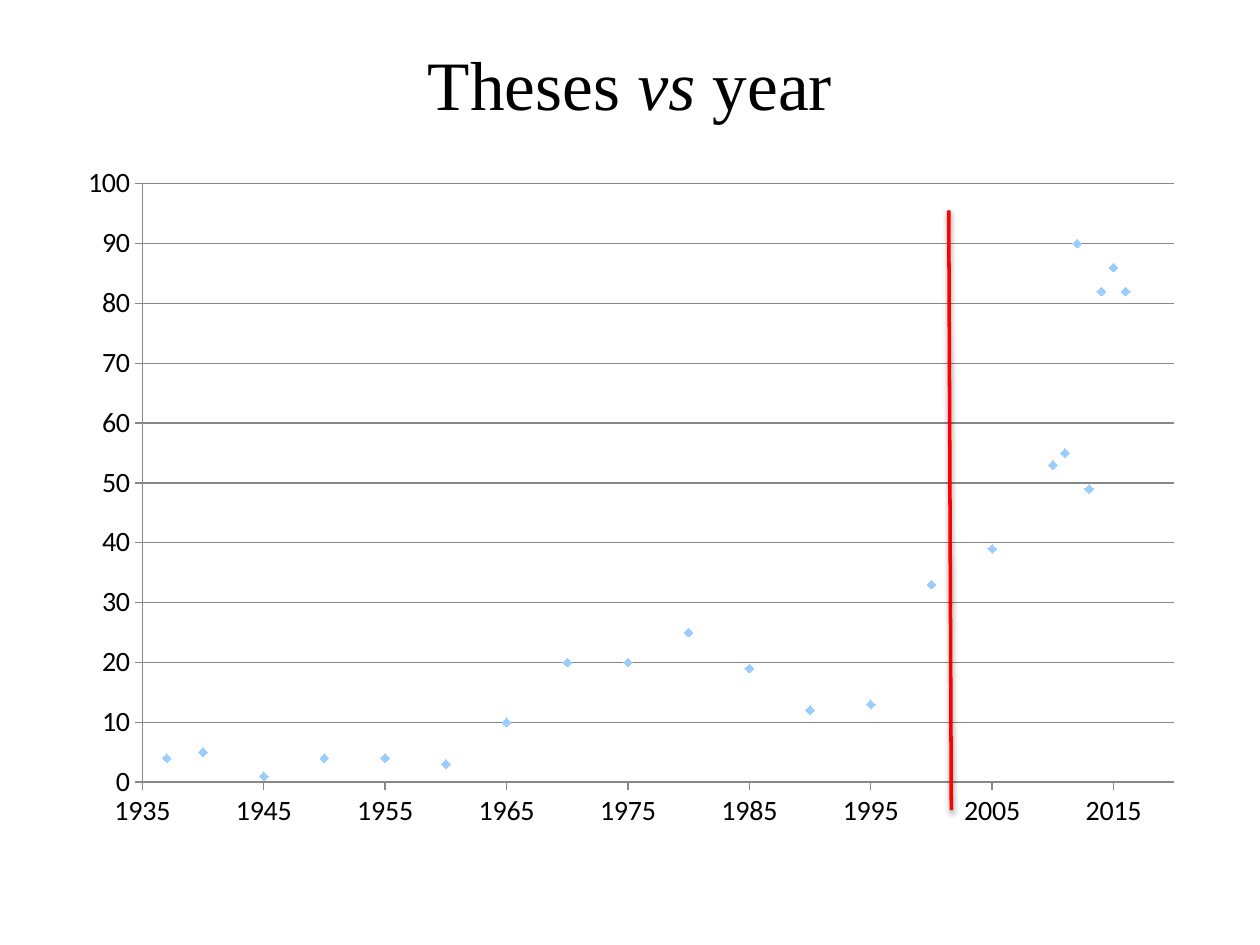
from dataclasses import dataclass

from lxml import etree
from pptx import Presentation
from pptx import util as u
from pptx.chart import data as cd
from pptx.dml.color import RGBColor
from pptx.enum import chart as ch, shapes, text
from pptx.oxml import parse_xml
from pptx.oxml.ns import nsdecls, qn


@dataclass
class Run:
    text: str
    italic: bool = False


@dataclass
class AxisSpec:
    low: int
    high: int
    step: int
    grid: bool


TITLE = [Run("Theses "), Run("vs", True), Run(" year")]
YEARS = [1937, *range(1940, 2010, 5), *range(2010, 2017)]
THESES = [4, 5, 1, 4, 4, 3, 10, 20, 20, 25, 19, 12, 13, 33, 39,
          53, 55, 90, 49, 82, 86, 82]
YEAR_AXIS = AxisSpec(1935, 2020, 10, False)
THESES_AXIS = AxisSpec(0, 100, 10, True)
PLOT = {"x": 0.07, "y": 0.04, "w": 0.91, "h": 0.87}


def rgb(value: str) -> RGBColor:
    return RGBColor.from_string(value)


def apply(target, values: dict) -> None:
    for name, value in values.items():
        setattr(target, name, value)


def add_title(s) -> None:
    sp = s.shapes.add_textbox(*map(u.Inches, (0.5, 0.3, 9, 0.72)))
    tf = sp.text_frame
    apply(tf, {"word_wrap": True, "vertical_anchor": text.MSO_ANCHOR.MIDDLE})
    p = tf.paragraphs[0]
    p.alignment = text.PP_ALIGN.CENTER
    for item in TITLE:
        r = p.add_run()
        r.text = item.text
        apply(r.font, {"name": "Times New Roman", "size": u.Pt(39.6),
                       "italic": item.italic})
        r.font.color.rgb = rgb("000000")


def format_axis(axis, spec: AxisSpec) -> None:
    apply(axis, {"minimum_scale": spec.low, "maximum_scale": spec.high,
                 "major_unit": spec.step, "has_major_gridlines": spec.grid,
                 "major_tick_mark": ch.XL_TICK_MARK.OUTSIDE,
                 "minor_tick_mark": ch.XL_TICK_MARK.NONE})
    apply(axis.tick_labels, {"number_format": "General",
                             "number_format_is_linked": False})
    lines = [axis.format.line]
    if spec.grid:
        lines.append(axis.major_gridlines.format.line)
    for line in lines:
        line.color.rgb = rgb("878787")
        line.width = u.Pt(0.75)


def set_plot_layout(chart) -> None:
    area = chart.element.find(".//" + qn("c:plotArea"))
    for old in area.findall(qn("c:layout")):
        area.remove(old)
    layout = parse_xml(f"<c:layout {nsdecls('c')}><c:manualLayout/></c:layout>")
    values = {"layoutTarget": "inner", "xMode": "edge", "yMode": "edge", **PLOT}
    for name, value in values.items():
        etree.SubElement(layout[0], qn(f"c:{name}")).set("val", str(value))
    area.insert(0, layout)


def add_scatter(s) -> None:
    data = cd.XyChartData()
    points = data.add_series("Series 1")
    for year, count in zip(YEARS, THESES):
        points.add_data_point(year, count)
    chart = s.shapes.add_chart(ch.XL_CHART_TYPE.XY_SCATTER,
                               *map(u.Inches, (0.5, 1.24, 9, 5.46)), data).chart
    apply(chart, {"has_legend": False, "has_title": False})
    apply(chart.font, {"name": "Calibri", "size": u.Pt(16)})
    chart.font.color.rgb = rgb("000000")
    chart.plots[0].vary_by_categories = False
    format_axis(chart.category_axis, YEAR_AXIS)
    format_axis(chart.value_axis, THESES_AXIS)
    series = chart.plots[0].series[0]
    series.smooth = False
    series.format.line.fill.background()
    apply(series.marker, {"style": ch.XL_MARKER_STYLE.DIAMOND, "size": 5})
    fill = series.marker.format.fill
    fill.solid()
    fill.fore_color.rgb = rgb("99CCFF")
    series.marker.format.line.color.rgb = rgb("99CCFF")
    set_plot_layout(chart)


def add_divider(s) -> None:
    sp = s.shapes.add_connector(shapes.MSO_CONNECTOR.STRAIGHT,
                                *map(u.Inches, (7.53, 1.67, 7.55, 6.43)))
    sp.line.color.rgb = rgb("FF0000")
    sp.line.width = u.Pt(2)
    sp.element.spPr.append(parse_xml(
        f'<a:effectLst {nsdecls("a")}>'
        f'<a:outerShdw blurRad="{u.Pt(3.1)}" dist="{u.Pt(1.6)}" '
        f'dir="{90 * 60000}" rotWithShape="0"><a:srgbClr val="000000">'
        '<a:alpha val="38000"/></a:srgbClr></a:outerShdw></a:effectLst>'))


def main() -> None:
    prs = Presentation()
    apply(prs, {"slide_width": u.Inches(10), "slide_height": u.Inches(7.5)})
    s = prs.slides.add_slide(prs.slide_layouts[6])
    add_scatter(s)
    add_title(s)
    add_divider(s)
    prs.save("out.pptx")


if __name__ == "__main__":
    main()
